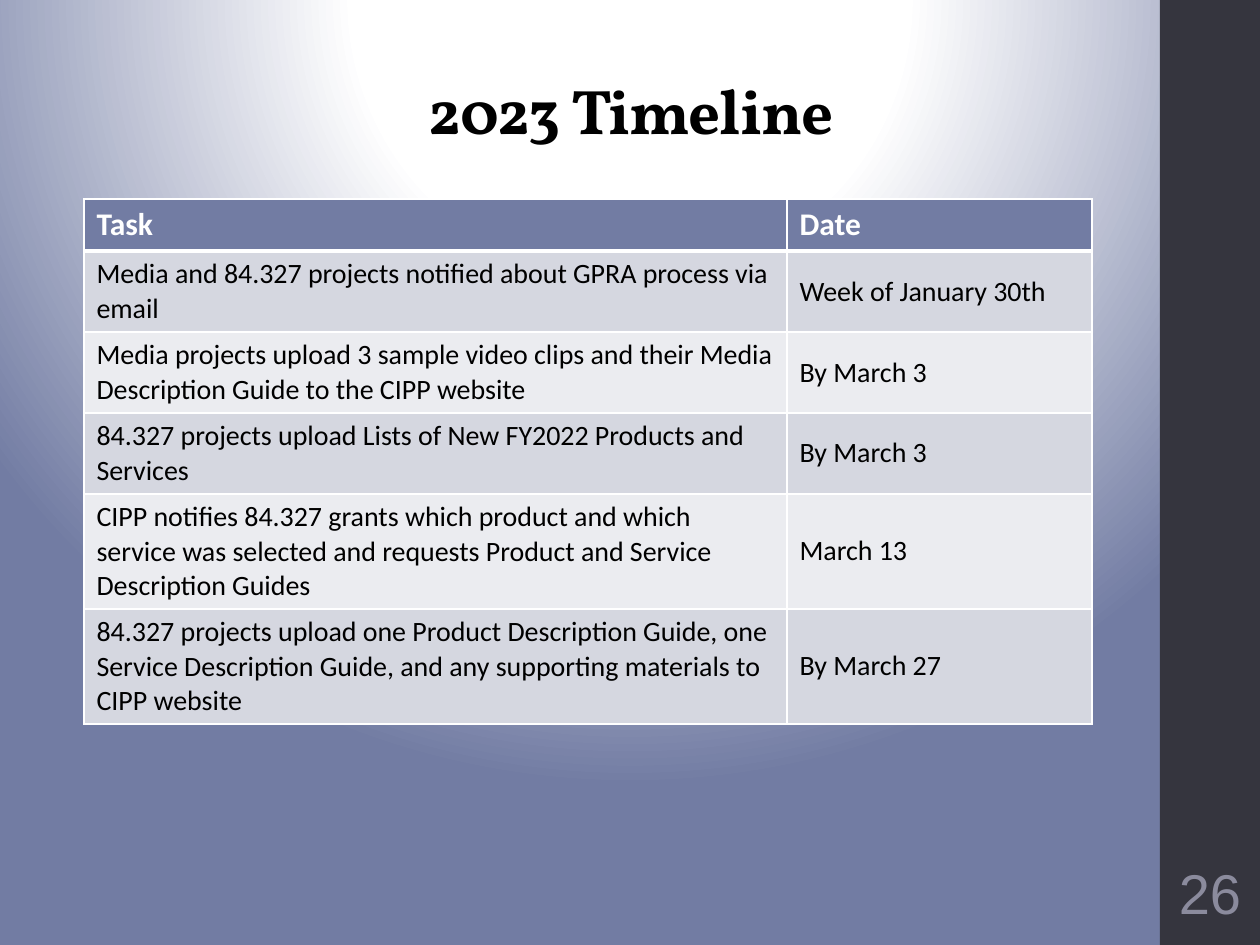
import pptx
import pptx.util
import pptx.oxml
import pptx.oxml.ns
import pptx.dml.color
import pptx.enum.shapes
import pptx.enum.text
from lxml import etree

RGBColor = pptx.dml.color.RGBColor
Pt = pptx.util.Pt
ANCHOR = pptx.enum.text.MSO_ANCHOR
CENTER = pptx.enum.text.PP_ALIGN.CENTER

TITLE = "2023 Timeline"
PAGE = "26"
HEADER = ("Task", "Date")
TASKS = [
    ("Media and 84.327 projects notified about GPRA process via email", "Week of January 30th"),
    ("Media projects upload 3 sample video clips and their Media Description Guide to the CIPP website", "By March 3"),
    ("84.327 projects upload Lists of New FY2022 Products and Services", "By March 3"),
    ("CIPP notifies 84.327 grants which product and which service was selected and requests "
     "Product and Service Description Guides", "March 13"),
    ("84.327 projects upload one Product Description Guide, one Service Description Guide, "
     "and any supporting materials to CIPP website", "By March 27"),
]
COLUMNS = (703, 305)
ROWS = (52, 81, 81, 81, 115, 115)

BLACK = RGBColor(0x00, 0x00, 0x00)
WHITE = RGBColor(0xFF, 0xFF, 0xFF)
BLUE = RGBColor(0x72, 0x7C, 0xA3)
BANDS = (RGBColor(0xD5, 0xD7, 0xE0), RGBColor(0xEB, 0xEC, 0xF0))
DARK = RGBColor(0x35, 0x35, 0x3E)
GREY = RGBColor(0x8B, 0x8B, 0x9D)

BACKGROUND_STOPS = ((0, WHITE), (35, WHITE), (100, BLUE))


def px(n):
    return round(n * 914400 / 126)


def set_background(s):
    s.background.fill.gradient()
    grad = s.background._cSld.bg.bgPr.find(pptx.oxml.ns.qn("a:gradFill"))
    stops = "".join(
        f'<a:gs pos="{pos * 1000}"><a:srgbClr val="{color}"/></a:gs>'
        for pos, color in BACKGROUND_STOPS
    )
    new = pptx.oxml.parse_xml(
        f'<a:gradFill {pptx.oxml.ns.nsdecls("a")} rotWithShape="1"><a:gsLst>{stops}</a:gsLst>'
        '<a:path path="circle"><a:fillToRect l="50000" t="-80000" r="50000" b="180000"/>'
        '</a:path></a:gradFill>'
    )
    grad.getparent().replace(grad, new)


def write(tf, text, size, font, color, bold=False):
    p = tf.paragraphs[0]
    r = p.add_run()
    r.text = text
    r.font.size = Pt(size)
    r.font.name = font
    r.font.bold = bold
    r.font.color.rgb = color
    return p, r


def add_text(s, box, anchor, *style):
    tf = s.shapes.add_textbox(*map(px, box)).text_frame
    tf.word_wrap = True
    tf.vertical_anchor = anchor
    p, r = write(tf, *style)
    p.alignment = CENTER
    return tf, p, r


def set_borders(cell, bottom, top):
    tcPr = cell._tc.get_or_add_tcPr()
    widths = (("L", 1), ("R", 1), ("T", top), ("B", bottom))
    for i, (side, width) in enumerate(widths):
        ln = pptx.oxml.parse_xml(
            f'<a:ln{side} {pptx.oxml.ns.nsdecls("a")} w="{Pt(width)}"><a:solidFill>'
            f'<a:srgbClr val="{WHITE}"/></a:solidFill></a:ln{side}>'
        )
        tcPr.insert(i, ln)


def add_timeline(s):
    rows = [HEADER] + TASKS
    frame = s.shapes.add_table(
        len(rows), len(COLUMNS), px(84), px(199), px(sum(COLUMNS)), px(sum(ROWS)))
    table = frame.table
    for column, width in zip(table.columns, COLUMNS):
        column.width = px(width)
    for i, (row, height) in enumerate(zip(rows, ROWS)):
        table.rows[i].height = px(height)
        for j, text in enumerate(row):
            cell = table.cell(i, j)
            cell.fill.solid()
            if i == 0:
                cell.fill.fore_color.rgb = BLUE
                write(cell.text_frame, text, 18, "Calibri", WHITE, True)
            else:
                cell.fill.fore_color.rgb = BANDS[(i - 1) % 2]
                write(cell.text_frame, text, 16, "Calibri", BLACK)
                if j == 1:
                    cell.vertical_anchor = ANCHOR.MIDDLE
            set_borders(cell, 3 if i == 0 else 1, 3 if i == 1 else 1)


def main():
    prs = pptx.Presentation()
    prs.slide_width, prs.slide_height = px(1260), px(945)
    s = prs.slides.add_slide(prs.slide_layouts[6])
    set_background(s)

    bar = s.shapes.add_shape(
        pptx.enum.shapes.MSO_SHAPE.RECTANGLE, px(1160), 0, px(100), px(945))
    bar.shadow.inherit = False
    bar.fill.solid()
    bar.fill.fore_color.rgb = DARK
    bar.line.fill.background()

    tf, p, r = add_text(s, (130, 50, 1002, 104), ANCHOR.BOTTOM,
                        TITLE, 36, "Vollkorn", BLACK, True)
    p.line_spacing = 0.9
    r.font._element.set("spc", "-50")

    add_timeline(s)

    tf, p, r = add_text(s, (1163, 851, 94, 82), ANCHOR.MIDDLE, PAGE, 32, "Arial", GREY)
    tf.margin_left = tf.margin_right = px(4)
    prs.save("out.pptx")


if __name__ == "__main__":
    main()
